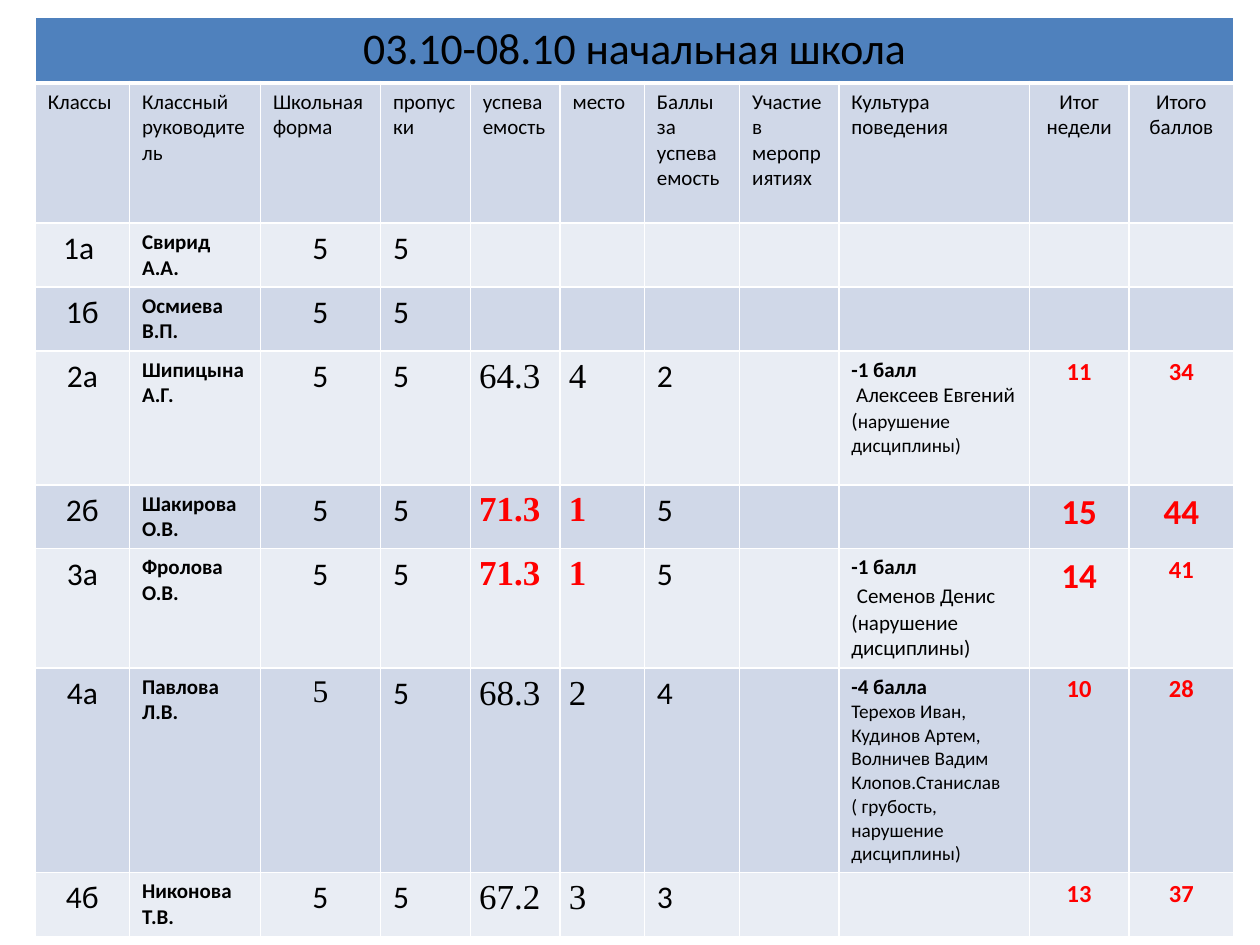
from lxml import etree
from pptx import Presentation
from pptx.dml.color import RGBColor
from pptx.enum.text import PP_ALIGN
from pptx.oxml.ns import qn
from pptx.util import Cm, Pt

LEFT, CENTER = PP_ALIGN.LEFT, PP_ALIGN.CENTER
SANS, SERIF = "Calibri", "Times New Roman"
BLACK, RED, WHITE = "000000", "FF0000", "FFFFFF"
BLUE, DARK, LIGHT = "4F81BD", "D0D8E8", "E9EDF4"

COLS = [1.9, 2.64, 2.42, 1.81, 1.81, 1.7, 1.92, 2, 3.84, 2.01, 2.11]
ROWS = [1.25, 2.83, 1.25, 1.25, 2.7, 1.25, 2.3, 3.95, 1.25]
HEADS = ["Классы", "Классный руководитель", "Школьная форма", "пропуски",
         "успеваемость", "место", "Баллы за успеваемость",
         "Участие в мероприятиях", "Культура поведения",
         "Итог недели", "Итого баллов"]

# Conduct notes: paragraphs of (text, size, bold) runs
NOTES = {
    "2а": [[("-1 балл", 12, True)],
           [(" Алексеев Евгений", 12, False)],
           [("(", 12, False), ("нарушение дисциплины)", 11, False)]],
    "3а": [[("-1 балл", 12, True)],
           [(" ", 14, False), ("Семенов Денис", 12, False)],
           [("(нарушение дисциплины)", 12, False)]],
    "4а": [[("-4 балла", 12, True)],
           [("Терехов Иван, Кудинов Артем, Волничев Вадим", 11, False)],
           [("Клопов.Станислав", 11, False)],
           [("( грубость, нарушение дисциплины)", 11, False)]],
}

# Class, teacher, mark, place, points, (week, size), (total, size)
GRADES = [
    ("1а ", "Свирид А.А.", None),
    ("1б", "Осмиева В.П.", None),
    ("2а", "Шипицына А.Г.", ("64.3", "4", "2", ("11", 14), ("34", 14))),
    ("2б", "Шакирова О.В.", ("71.3", "1", "5", ("15", 20), ("44", 20))),
    ("3а", "Фролова О.В.", ("71.3", "1", "5", ("14", 20), ("41", 14))),
    ("4а", "Павлова Л.В.", ("68.3", "2", "4", ("10", 14), ("28", 14))),
    ("4б", "Никонова Т.В.", ("67.2", "3", "3", ("13", 14), ("37", 14))),
]


def rgb(code):
    return RGBColor.from_string(code)


class Deck:
    def __init__(self, wide, high):
        self.prs = Presentation()
        self.prs.slide_width, self.prs.slide_height = Cm(wide), Cm(high)
        self.slide = self.prs.slides.add_slide(self.prs.slide_layouts[6])

    def grid(self, x, y, cols, rows):
        frame = self.slide.shapes.add_table(
            len(rows), len(cols), Cm(x), Cm(y), Cm(sum(cols)), Cm(sum(rows)))
        table = frame.table
        table.first_row = table.horz_banding = False
        for col, wide in zip(table.columns, cols):
            col.width = Cm(wide)
        for row, high in zip(table.rows, rows):
            row.height = Cm(high)
        return table

    def paint(self, cell, fill, top=1, bottom=1):
        cell.fill.solid()
        cell.fill.fore_color.rgb = rgb(fill)
        props = cell._tc.get_or_add_tcPr()
        sides = [("L", 1), ("R", 1), ("T", top), ("B", bottom)]
        for spot, (side, wide) in enumerate(sides):
            line = etree.Element(qn("a:ln" + side), w=str(Pt(wide)))
            solid = etree.SubElement(line, qn("a:solidFill"))
            etree.SubElement(solid, qn("a:srgbClr"), val=WHITE)
            props.insert(spot, line)

    def style(self, font, size, bold=False, color=BLACK, face=SANS):
        font.name, font.size, font.bold = face, Pt(size), bold
        font.color.rgb = rgb(color)

    def text(self, cell, words, size, align=LEFT, **look):
        cell.text_frame.text = words
        para = cell.text_frame.paragraphs[0]
        para.alignment = align
        self.style(para.runs[0].font, size, **look)

    def mark(self, cell, words, best):
        self.text(cell, words, 20, bold=best, face=SERIF,
                  color=RED if best else BLACK)
        cell.margin_left = cell.margin_right = Cm(0.18)
        cell.margin_top = cell.margin_bottom = 0
        para = cell.text_frame.paragraphs[0]
        para.line_spacing, para.space_after = 1.15, Pt(3)

    def note(self, cell, paras):
        frame = cell.text_frame
        for spot, runs in enumerate(paras):
            para = frame.paragraphs[0] if spot == 0 else frame.add_paragraph()
            for words, size, bold in runs:
                run = para.add_run()
                run.text = words
                self.style(run.font, size, bold)


def main():
    deck = Deck(25.4, 19.05)
    table = deck.grid(0.71, 0.34, COLS, ROWS)

    # Fills and borders
    for row in range(len(ROWS)):
        fill = BLUE if row == 0 else DARK if row % 2 else LIGHT
        for col in range(len(COLS)):
            deck.paint(table.cell(row, col), fill,
                       top=3 if row == 1 else 1, bottom=1 if row else 3)

    # Banner and column heads
    banner = table.cell(0, 0)
    banner.merge(table.cell(0, len(COLS) - 1))
    deck.text(banner, "03.10-08.10 начальная школа", 25, CENTER)
    for col, head in enumerate(HEADS):
        deck.text(table.cell(1, col), head, 12, CENTER if col > 8 else LEFT)

    # One row for each class
    for row, (name, lead, score) in enumerate(GRADES, 2):
        cells = table.rows[row].cells
        deck.text(cells[0], name, 18, CENTER)
        deck.text(cells[1], lead, 12, bold=True)
        deck.text(cells[2], "5", 18, CENTER,
                  face=SERIF if name == "4а" else SANS)
        deck.text(cells[3], "5", 18)
        if score:
            rate, place, points, *sums = score
            deck.mark(cells[4], rate, place == "1")
            deck.mark(cells[5], place, place == "1")
            deck.text(cells[6], points, 18)
            for col, (total, size) in enumerate(sums, 9):
                deck.text(cells[col], total, size, CENTER,
                          bold=True, color=RED)
        if name in NOTES:
            deck.note(cells[8], NOTES[name])

    deck.prs.save("out.pptx")


if __name__ == "__main__":
    main()
